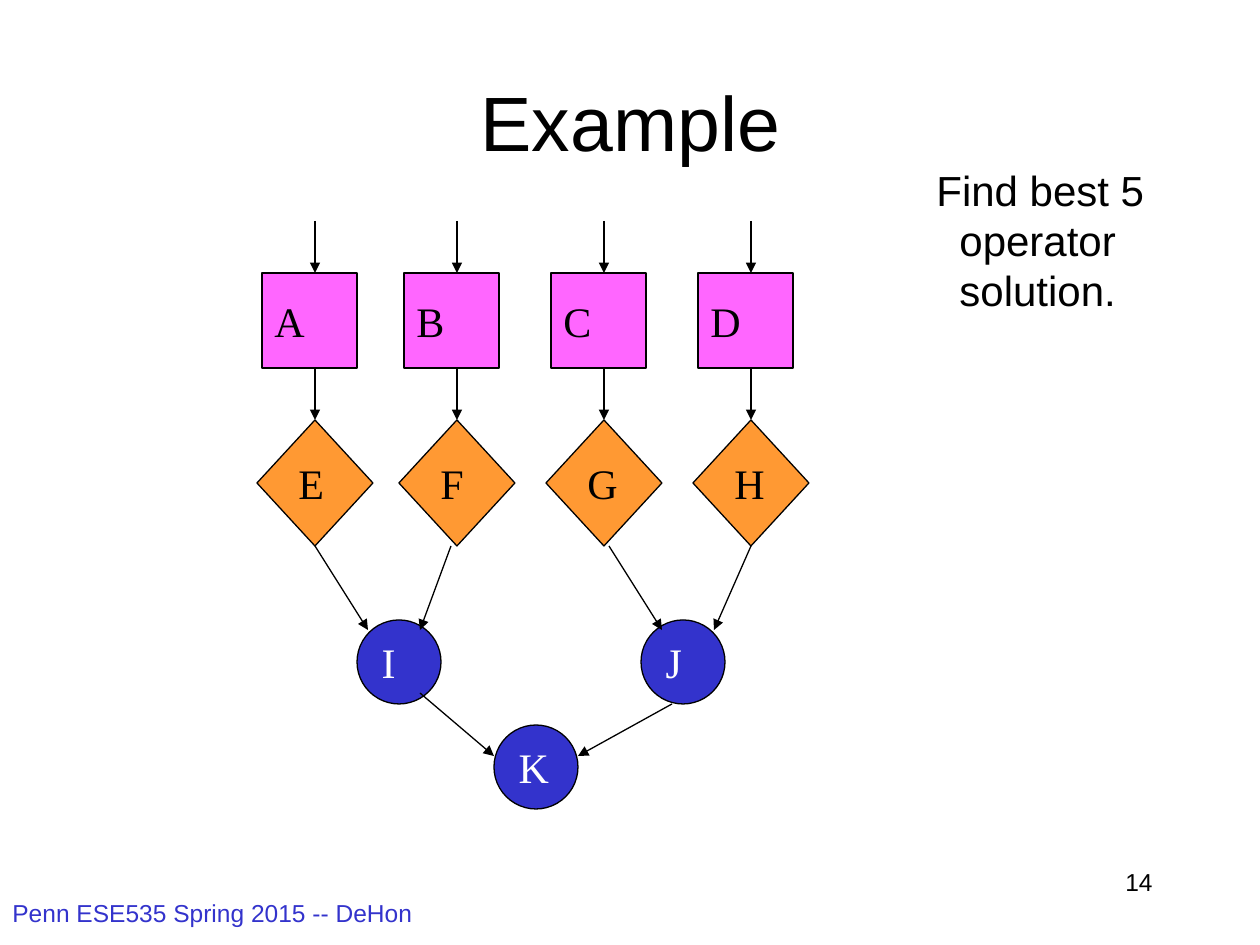
"""Build the operator graph example slide."""
from dataclasses import dataclass

from pptx import Presentation
from pptx.dml.color import RGBColor as Rgb
from pptx.enum.shapes import MSO_CONNECTOR as Conn, MSO_SHAPE as Kind
from pptx.enum.text import MSO_ANCHOR as Anchor, PP_ALIGN as Align
from pptx.oxml.ns import qn
from pptx.util import Emu, Pt
from lxml.etree import SubElement

HUES = {"ink": "000000", "white": "FFFFFF", "blue": "3333CC",
        "pink": "FF66FF", "amber": "FF9933"}
SCALE = 914400 / 126


@dataclass(frozen=True)
class Style:
    kind: Kind
    wide: int
    high: int
    fill: str
    ink: str


@dataclass(frozen=True)
class Link:
    start: tuple
    end: tuple
    source: str = ""


BOX = Style(Kind.RECTANGLE, 95, 95, "pink", "ink")
GEM = Style(Kind.DIAMOND, 116, 126, "amber", "ink")
DISC = Style(Kind.OVAL, 84, 84, "blue", "white")
COLS = (262, 404, 551, 698)
DISCS = {"I": (357, 620), "J": (641, 620), "K": (494, 725)}
LINKS = (
    Link((315, 546), (368, 630), "E"),
    Link((451, 546), (420, 630)),
    Link((609, 546), (662, 630)),
    Link((751, 546), (714, 630), "H"),
    Link((420, 693), (494, 756)),
    Link((672, 704), (578, 756)),
)


def px(*nums: int) -> list:
    return [Emu(round(num * SCALE)) for num in nums]


def tint(name: str) -> Rgb:
    return Rgb.from_string(HUES[name])


def format_text(frame, size: int, ink: str = "ink", face: str = "Arial") -> None:
    for para in frame.paragraphs:
        for run in para.runs:
            run.font.size = Pt(size)
            run.font.name = face
            run.font.color.rgb = tint(ink)


def add_node(slide, label: str, style: Style, left: int, top: int):
    node = slide.shapes.add_shape(
        style.kind, *px(left, top, style.wide, style.high))
    node.shadow.inherit = False
    node.fill.solid()
    node.fill.fore_color.rgb = tint(style.fill)
    node.line.color.rgb = tint("ink")
    node.line.width = Pt(0.75)
    frame = node.text_frame
    frame.text = label
    frame.word_wrap = False
    frame.vertical_anchor = Anchor.MIDDLE
    frame.paragraphs[0].alignment = Align.LEFT
    format_text(frame, 24, style.ink, "Times New Roman")
    return node


def add_arrow(slide, start: tuple, end: tuple):
    arrow = slide.shapes.add_connector(Conn.STRAIGHT, *px(*start, *end))
    arrow.line.color.rgb = tint("ink")
    arrow.line.width = Pt(0.75)
    SubElement(arrow.line._get_or_add_ln(), qn("a:tailEnd"), type="triangle")
    SubElement(arrow._element.spPr, qn("a:effectLst"))
    return arrow


def add_label(slide, text: str, place: tuple, size: int, ink: str = "ink",
              wrap: bool = True):
    frame = slide.shapes.add_textbox(*px(*place)).text_frame
    frame.text = text
    frame.word_wrap = wrap
    format_text(frame, size, ink)
    return frame


def main() -> None:
    deck = Presentation()
    deck.slide_width, deck.slide_height = px(1260, 945)
    slide = deck.slides.add_slide(deck.slide_layouts[5])

    title = slide.shapes.title
    title.left, title.top, title.width, title.height = px(95, 42, 1071, 158)
    title.text_frame.text = "Example"
    title.text_frame.vertical_anchor = Anchor.MIDDLE
    title.text_frame.paragraphs[0].alignment = Align.CENTER
    format_text(title.text_frame, 44)

    add_label(slide, "Penn ESE535 Spring 2015 -- DeHon", (0, 892, 483, 53),
              14, "blue")
    page = add_label(slide, "14", (903, 861, 262, 63), 14)
    page.paragraphs[0].alignment = Align.RIGHT
    task = add_label(slide, "Find best 5\noperator\nsolution.",
                     (924, 158, 233, 164), 24, wrap=False)
    for para in task.paragraphs[1:]:
        para._p.get_or_add_pPr().set("marL", str(px(23)[0]))

    gems = {}
    for left, top, low in zip(COLS, "ABCD", "EFGH"):
        mid = left + 53
        add_node(slide, top, BOX, left, 273)
        gems[low] = add_node(slide, low, GEM, left - 5, 420)
        add_arrow(slide, (mid, 221), (mid, 273))
        add_arrow(slide, (mid, 368), (mid, 420)).end_connect(gems[low], 0)

    for label, spot in DISCS.items():
        add_node(slide, label, DISC, *spot)
    for link in LINKS:
        arrow = add_arrow(slide, link.start, link.end)
        if link.source:
            arrow.begin_connect(gems[link.source], 2)

    deck.save("out.pptx")


if __name__ == "__main__":
    main()
